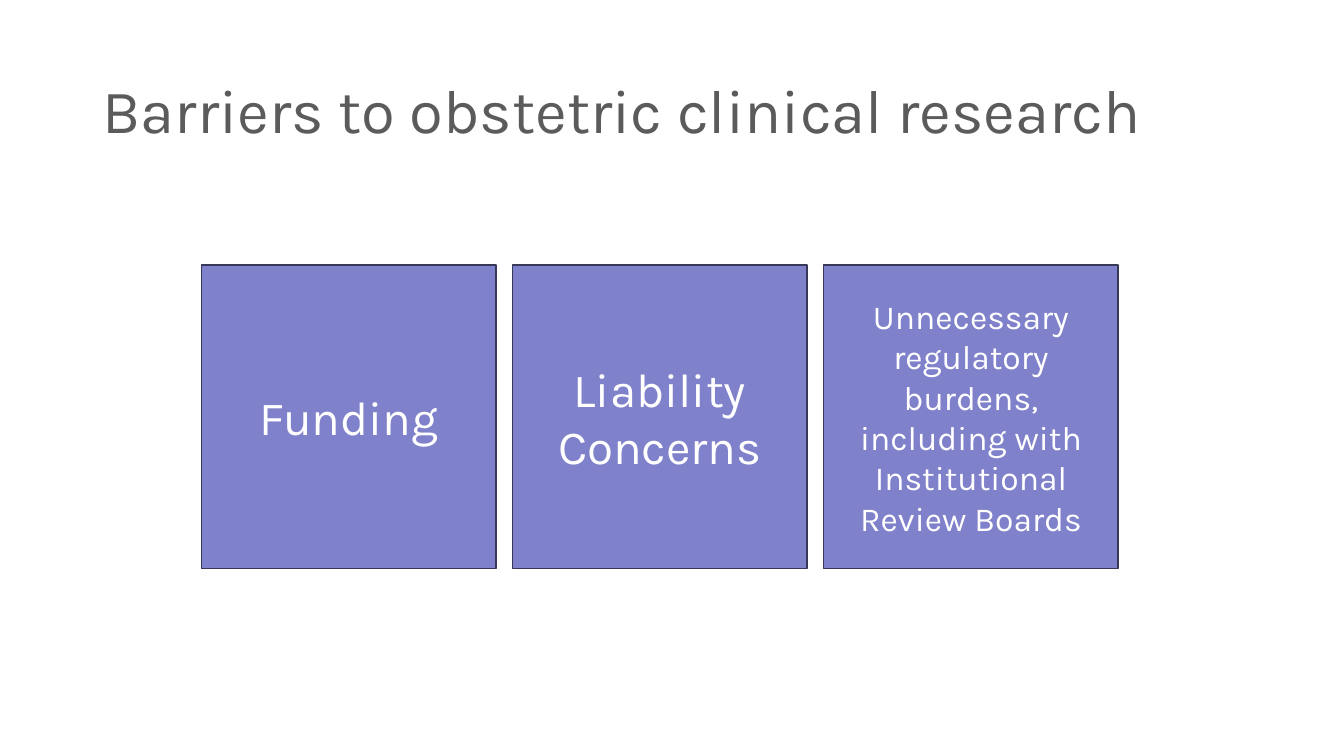
"""Build a slide on the barriers to obstetric clinical research."""
import pptx
import pptx.dml.color
import pptx.enum.shapes
import pptx.enum.text
import pptx.util

Inches = pptx.util.Inches


def color(value):
    return pptx.dml.color.RGBColor.from_string(value)


def write(shape, text, size, fill, align, line_spacing=1.0):
    frame = shape.text_frame
    frame.word_wrap = True
    frame.vertical_anchor = pptx.enum.text.MSO_ANCHOR.MIDDLE
    frame.text = text
    for paragraph in frame.paragraphs:
        paragraph.alignment = align
        paragraph.line_spacing = line_spacing
        paragraph.font.name = "Karla"
        paragraph.font.size = pptx.util.Pt(size)
        paragraph.font.color.rgb = color(fill)


presentation = pptx.Presentation()
presentation.slide_width = Inches(13.33)
presentation.slide_height = Inches(7.5)
slide = presentation.slides.add_slide(presentation.slide_layouts[6])

title = slide.shapes.add_textbox(Inches(0.92), Inches(0.4), Inches(11.5), Inches(1.45))
write(title, "Barriers to obstetric clinical research", size=44, fill="5B5B5B",
      align=pptx.enum.text.PP_ALIGN.LEFT, line_spacing=0.9)

barriers = [
    ("Funding", 34),
    ("Liability Concerns", 34),
    ("Unnecessary regulatory burdens,\nincluding with Institutional Review Boards", 24),
]
card_left, card_step = 2, 3.085
for index, (text, size) in enumerate(barriers):
    card = slide.shapes.add_shape(
        pptx.enum.shapes.MSO_SHAPE.RECTANGLE,
        Inches(card_left + index * card_step), Inches(2.63), Inches(2.92), Inches(3.01))
    card.shadow.inherit = False
    card.fill.solid()
    card.fill.fore_color.rgb = color("8081CB")
    card.line.color.rgb = color("383959")
    card.line.width = pptx.util.Pt(1)
    write(card, text, size=size, fill="FFFFFF", align=pptx.enum.text.PP_ALIGN.CENTER)

presentation.save("out.pptx")
